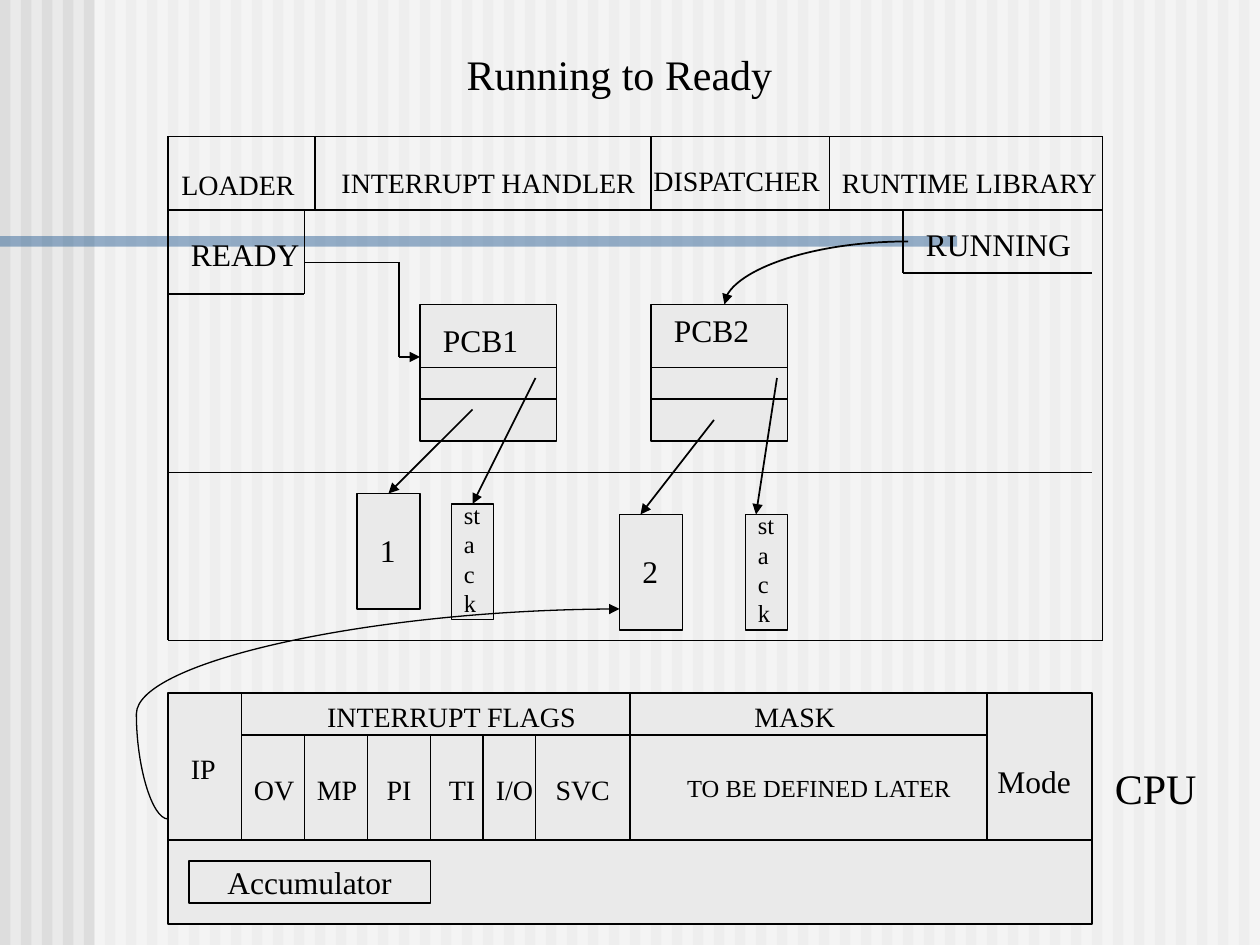
from dataclasses import dataclass
from typing import Any

from lxml.etree import SubElement
from pptx import Presentation
from pptx.dml.color import RGBColor
from pptx.enum.shapes import MSO_CONNECTOR, MSO_SHAPE
from pptx.enum.text import MSO_ANCHOR, PP_ALIGN
from pptx.oxml.ns import qn
from pptx.util import Pt


@dataclass(frozen=True)
class Theme:
    background: RGBColor = RGBColor(0xEA, 0xEA, 0xEA)
    stripe: RGBColor = RGBColor(0xDD, 0xDD, 0xDD)
    veil: RGBColor = RGBColor(0xFF, 0xFF, 0xFF)
    band: RGBColor = RGBColor(0x33, 0x66, 0x99)
    ink: RGBColor = RGBColor(0, 0, 0)
    font: str = "Times New Roman"
    title: float = 24
    large: float = 18
    medium: float = 16
    small: float = 14
    thin: float = 0.75
    normal: float = 1
    thick: float = 1.5


THEME = Theme()


@dataclass(frozen=True)
class Box:
    left: float
    top: float
    width: float
    height: float
    line_width: float = 0
    fill: RGBColor = THEME.background
    opacity: int = 100


@dataclass(frozen=True)
class Line:
    x1: float
    y1: float
    x2: float
    y2: float
    width: float = THEME.thin
    arrow: bool = False


@dataclass(frozen=True)
class Label:
    text: str
    left: float
    top: float
    width: float
    size: float = THEME.medium
    centered: bool = False
    rows: int = 1


def set_values(target: Any, values: dict[str, Any]) -> None:
    for name, value in values.items():
        setattr(target, name, value)


def write_text(frame: Any, text: str, size: float, centered: bool) -> None:
    para = frame.paragraphs[0]
    para.alignment = PP_ALIGN.CENTER if centered else PP_ALIGN.LEFT
    span = para.add_run()
    set_values(span, {"text": text})
    set_values(span.font, {"name": THEME.font, "size": Pt(size)})
    span.font.color.rgb = THEME.ink


def draw_box(page: Any, box: Box) -> Any:
    shape = page.shapes.add_shape(MSO_SHAPE.RECTANGLE, Pt(box.left), Pt(box.top),
                                  Pt(box.width), Pt(box.height))
    shape.shadow.inherit = False
    shape.fill.solid()
    shape.fill.fore_color.rgb = box.fill
    if box.opacity < 100:
        color = shape.fill._xPr.find(qn("a:solidFill"))[0]
        SubElement(color, qn("a:alpha"), val=str(box.opacity * 1000))
    if box.line_width:
        shape.line.width = Pt(box.line_width)
        shape.line.color.rgb = THEME.ink
    else:
        shape.line.fill.background()
    return shape


def draw_line(page: Any, line: Line, kind: Any = MSO_CONNECTOR.STRAIGHT) -> Any:
    connector = page.shapes.add_connector(kind, Pt(line.x1), Pt(line.y1),
                                          Pt(line.x2), Pt(line.y2))
    connector.line.width = Pt(line.width)
    connector.line.color.rgb = THEME.ink
    if line.arrow:
        SubElement(connector.line._get_or_add_ln(), qn("a:tailEnd"), type="triangle")
    SubElement(connector._element.spPr, qn("a:effectLst"))
    return connector


def draw_curve(page: Any, line: Line, preset: str, bend: int | None = None) -> None:
    """Draw a curved connector; bend is the preset's adjustment in 1/100000 of the width."""
    connector = draw_line(page, line, MSO_CONNECTOR.CURVE)
    geometry = connector._element.spPr.find(qn("a:prstGeom"))
    geometry.set("prst", preset)
    if bend is not None:
        SubElement(geometry.find(qn("a:avLst")), qn("a:gd"), name="adj1", fmla=f"val {bend}")


def draw_label(page: Any, label: Label) -> None:
    height = label.rows * label.size * 1.2 + 7.2
    box = page.shapes.add_textbox(Pt(label.left), Pt(label.top), Pt(label.width), Pt(height))
    box.text_frame.word_wrap = True
    write_text(box.text_frame, label.text, label.size, label.centered)


def draw_background(page: Any) -> None:
    page.background.fill.solid()
    page.background.fill.fore_color.rgb = THEME.background
    for index in range(60):
        draw_box(page, Box(index * 12, 0, 6, 540, fill=THEME.stripe))
    draw_box(page, Box(54, 0, 666, 540, fill=THEME.veil, opacity=50))
    draw_box(page, Box(0, 135, 547, 6, fill=THEME.band, opacity=50))


def draw_memory(page: Any) -> None:
    left, top, right, bottom, header = 96, 78, 630, 366, 120
    lines = [Line(left, y, right, y) for y in (top, header, bottom)]
    lines += [Line(x, top, x, bottom) for x in (left, right)]
    lines += [Line(x, top, x, header) for x in (180, 372, 474)]
    lines += [
        Line(left, 270, 624, 270),
        Line(left, 168, 174, 168), Line(174, header, 174, 168),
        Line(516, header, 516, 156), Line(516, 156, 624, 156),
        Line(174, 150, 228, 150), Line(228, 150, 228, 204),
        Line(228, 204, 240, 204, THEME.thick, True),
    ]
    for line in lines:
        draw_line(page, line)

    for pcb_left in (240, 372):
        draw_box(page, Box(pcb_left, 174, 78, 78, THEME.normal))
        for y in (210, 228):
            draw_line(page, Line(pcb_left, y, pcb_left + 78, y, THEME.normal))
    for x, y, width in ((204, 282, 36), (258, 288, 24), (354, 294, 36), (426, 294, 24)):
        draw_box(page, Box(x, y, width, 66, THEME.normal))
    for ends in ((306, 216, 270, 288), (270, 234, 222, 282),
                 (444, 216, 432, 294), (408, 240, 366, 294)):
        draw_line(page, Line(*ends, THEME.normal, True))
    draw_curve(page, Line(519, 138, 414, 174, THEME.normal, True), "curvedConnector2")
    draw_curve(page, Line(96, 468, 354, 348, THEME.thin, True), "curvedConnector3", -7000)


def draw_cpu(page: Any) -> None:
    left, top, right, flags, bottom = 96, 396, 624, 420, 480
    draw_box(page, Box(left, top, right - left, 132, THEME.thin))
    lines = [Line(left, bottom, right, bottom), Line(138, flags, 564, flags)]
    lines += [Line(x, top, x, bottom) for x in (138, 360, 564)]
    lines += [Line(x, flags, x, bottom) for x in (174, 210, 246, 276, 306)]
    for line in lines:
        draw_line(page, line)
    accumulator = draw_box(page, Box(108, 492, 138, 24, THEME.thin))
    set_values(accumulator.text_frame,
               {"word_wrap": False, "vertical_anchor": MSO_ANCHOR.MIDDLE})
    write_text(accumulator.text_frame, "Accumulator", THEME.large, True)


LABELS = (
    Label("Running to Ready", 225, 24, 258, THEME.title, True),
    Label("LOADER", 88, 92, 96, centered=True),
    Label("INTERRUPT HANDLER", 171, 91, 216, centered=True),
    Label("DISPATCHER", 358, 90, 126, centered=True),
    Label("RUNTIME LIBRARY", 474, 91, 168),
    Label("READY", 102, 131, 96, THEME.large),
    Label("RUNNING", 522, 125, 102, THEME.large),
    Label("PCB1", 246, 180, 72, THEME.large),
    Label("PCB2", 378, 174, 72, THEME.large),
    Label("1", 210, 300, 24, THEME.large),
    Label("2", 360, 312, 24, THEME.large),
    Label("stack", 258, 282, 24, THEME.small, rows=4),
    Label("stack", 426, 288, 24, THEME.small, rows=4),
    Label("IP", 102, 426, 30),
    Label("INTERRUPT FLAGS", 138, 396, 240, centered=True),
    Label("MASK", 424, 396, 72),
    Label("OV", 138, 438, 60),
    Label("MP", 174, 438, 60),
    Label("PI", 198, 438, 60, centered=True),
    Label("TI", 246, 438, 36, centered=True),
    Label("I/O", 270, 438, 48, centered=True),
    Label("SVC", 300, 438, 66, centered=True),
    Label("TO BE DEFINED LATER", 348, 438, 240, THEME.small, True),
    Label("Mode", 558, 432, 66, THEME.large, True),
    Label("CPU", 630, 432, 78, THEME.title),
)


def main() -> None:
    deck = Presentation()
    set_values(deck, {"slide_width": Pt(720), "slide_height": Pt(540)})
    page = deck.slides.add_slide(deck.slide_layouts[6])
    draw_background(page)
    draw_memory(page)
    draw_cpu(page)
    for label in LABELS:
        draw_label(page, label)
    deck.save("out.pptx")


if __name__ == "__main__":
    main()
